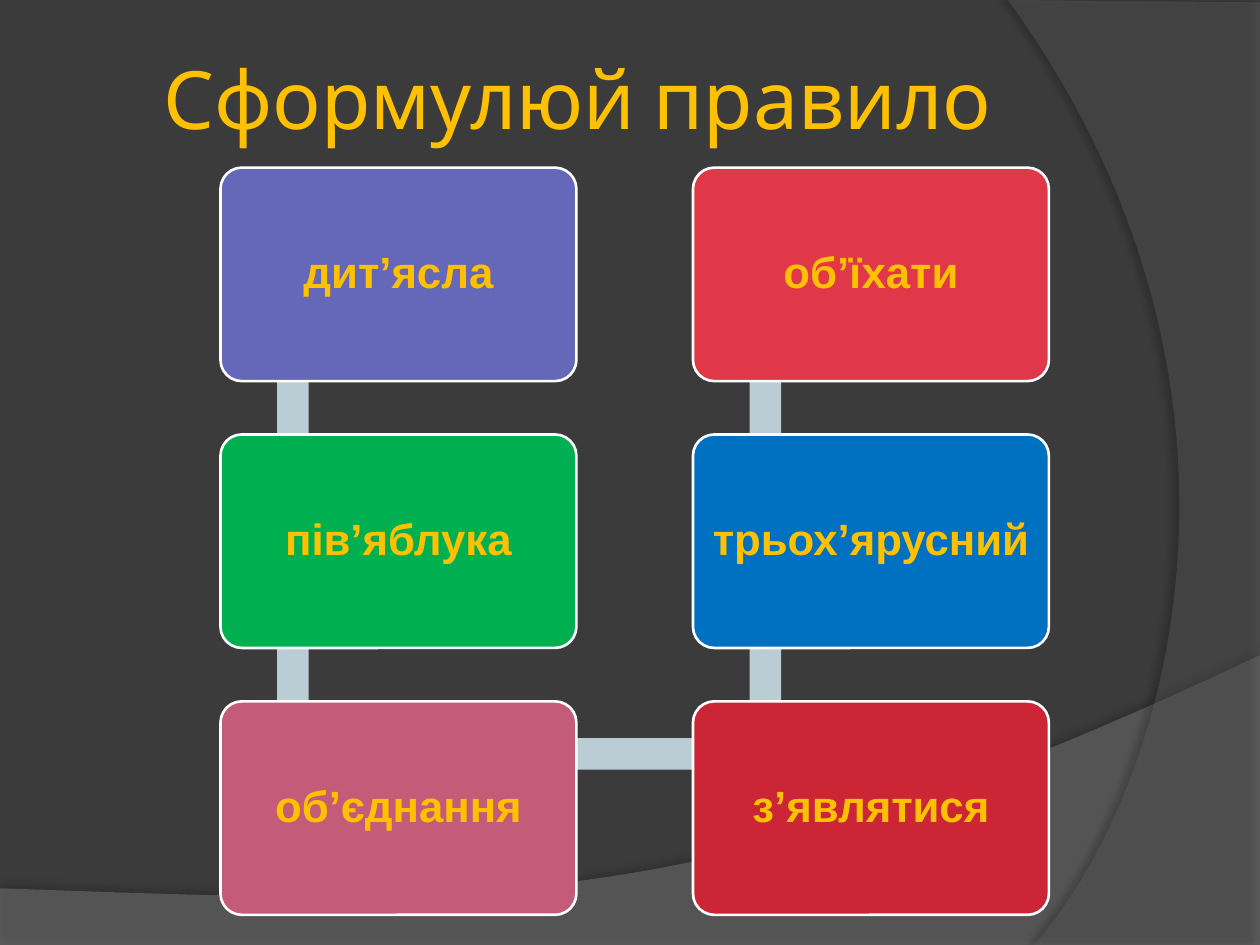
from lxml import etree
from pptx import Presentation
from pptx.dml.color import RGBColor
from pptx.enum.shapes import MSO_SHAPE
from pptx.enum.text import MSO_ANCHOR, PP_ALIGN
from pptx.oxml.ns import qn
from pptx.util import Pt

RECT, ROUND = MSO_SHAPE.RECTANGLE, MSO_SHAPE.ROUNDED_RECTANGLE
MIDDLE, CENTER = MSO_ANCHOR.MIDDLE, PP_ALIGN.CENTER
WIDE, HIGH = 720, 540
GOLD, BAR = "FFC000", "BACDD4"
COLUMNS = [
    [("дит’ясла", "6567B9"), ("пів’яблука", "00B050"), ("об’єднання", "C35B79")],
    [("об’їхати", "E03848"), ("трьох’ярусний", "0070C0"), ("з’являтися", "CC2636")],
]


def color(code):
    return RGBColor.from_string(code)


def paint(shape, fill, line=None):
    shape.shadow.inherit = False
    shape.fill.solid()
    shape.fill.fore_color.rgb = color(fill)
    if line:
        shape.line.color.rgb = color(line)
        shape.line.width = Pt(1.5)
    else:
        shape.line.fill.background()


def write(shape, text, size, font, bold=False, inset=3.6):
    frame = shape.text_frame
    frame.word_wrap = True
    frame.vertical_anchor = MIDDLE
    frame.margin_left = frame.margin_right = Pt(inset)
    frame.margin_top = frame.margin_bottom = Pt(inset)
    para = frame.paragraphs[0]
    para.alignment = CENTER
    run = para.add_run()
    run.text = text
    run.font.size, run.font.name, run.font.bold = Pt(size), font, bold
    run.font.color.rgb = color(GOLD)
    return para


def curve(a, b, c, d, steps=60):
    """Points along a cubic curve from a to d."""
    for i in range(1, steps + 1):
        t = i / steps
        u = 1 - t
        yield tuple(u**3 * p + 3 * u * u * t * q + 3 * u * t * t * r + t**3 * s
                    for p, q, r, s in zip(a, b, c, d))


def sweep(slide, points, fill, alpha, shade, dist, angle):
    """Translucent background outline with a soft outer shadow."""
    spots = [(Pt(x), Pt(y)) for x, y in points]
    build = slide.shapes.build_freeform(*spots[0])
    build.add_line_segments(spots[1:], close=True)
    shape = build.convert_to_shape()
    paint(shape, fill)
    props = shape.fill._xPr
    tint = props.find(qn("a:solidFill"))[0]
    etree.SubElement(tint, qn("a:alpha"), val=str(alpha * 1000))
    glow = etree.SubElement(props.find(qn("a:effectLst")), qn("a:outerShdw"),
                            blurRad=str(Pt(4)), dist=str(Pt(dist)),
                            dir=str(angle * 60000), rotWithShape="0")
    black = etree.SubElement(glow, qn("a:srgbClr"), val="000000")
    etree.SubElement(black, qn("a:alpha"), val=str(shade * 1000))


def backdrop(slide, wide, high):
    slide.background.fill.solid()
    slide.background.fill.fore_color.rgb = color("3B3B3B")
    # Bottom wave
    end = (wide, 374.4)
    wave = [(0, 507.6), (0, high), (wide, high), end]
    wave += curve(end, (402.5, 524.9), (281.5, 517.7), (0, 507.6))
    sweep(slide, wave, "7F7F7F", 45, 35, 3.5, 270)
    # Right arc
    foot = (591, high)
    arc = [(wide, 1.4), (wide, high), foot]
    arc += curve(foot, (673.2, 445.7), (733, 216), (576, 0))
    sweep(slide, arc, "5E5E5E", 40, 45, 4, 180)


def title(slide, x, y, w, h):
    box = slide.shapes.add_textbox(Pt(x), Pt(y), Pt(w), Pt(h))
    write(box, "Сформулюй правило", 46, "Cabin")


def bar(slide, x, y, w, h):
    paint(slide.shapes.add_shape(RECT, Pt(x), Pt(y), Pt(w), Pt(h)), BAR)


def card(slide, x, y, w, h, text, fill):
    shape = slide.shapes.add_shape(ROUND, Pt(x), Pt(y), Pt(w), Pt(h))
    shape.adjustments[0] = 0.1
    paint(shape, fill, "FFFFFF")
    write(shape, text, 25, "Arial", True, 7.2).line_spacing = 0.9


def chain(slide, x, y, w, h):
    """Two columns of cards, linked down, across and up."""
    wide, high, thick = 203.4, 122, 18
    across, down = w - wide, (h - high) / 2
    # Bars behind the cards
    for col in range(2):
        for row in range(2):
            bar(slide, x + col * across + 32.4, y + row * down + 30.4, thick, down)
    bar(slide, x + 41.4, y + 2 * down + 21, across, thick)
    # Cards
    for col, words in enumerate(COLUMNS):
        for row, (text, fill) in enumerate(words):
            card(slide, x + col * across, y + row * down, wide, high, text, fill)


def main():
    deck = Presentation()
    deck.slide_width, deck.slide_height = Pt(WIDE), Pt(HIGH)
    slide = deck.slides.add_slide(deck.slide_layouts[6])
    backdrop(slide, WIDE, HIGH)
    title(slide, 36, 0, 588, 111.6)
    chain(slide, 126, 95.8, 473.4, 427)
    deck.save("out.pptx")


if __name__ == "__main__":
    main()
